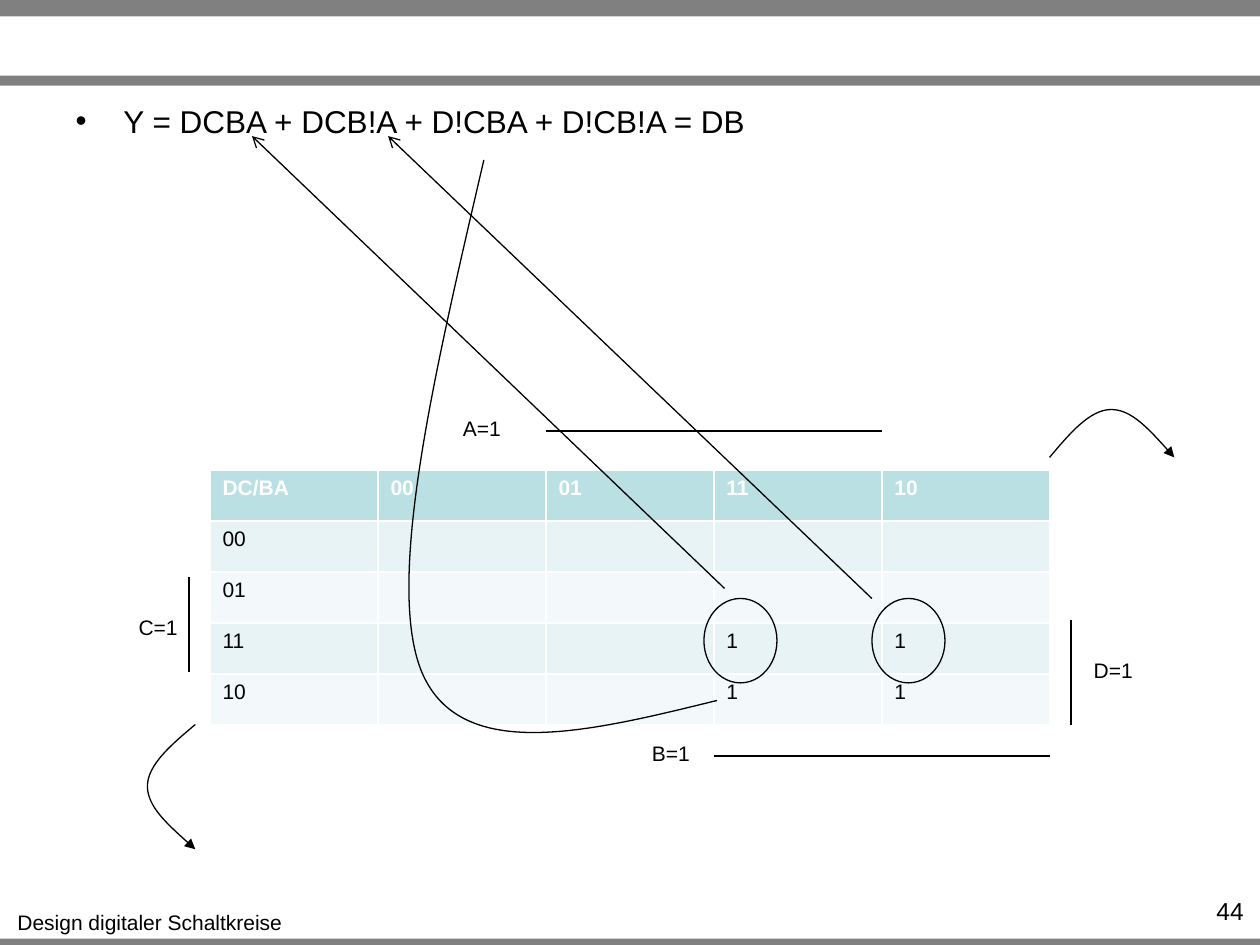
"""Build a Karnaugh map slide that simplifies Y to DB."""
from lxml import etree
from pptx import Presentation
from pptx import util as u
from pptx.dml.color import RGBColor
from pptx.enum import shapes, text
from pptx.oxml.ns import qn

BLACK = RGBColor(0, 0, 0)
WHITE = RGBColor(255, 255, 255)
GRAY = RGBColor(0x80, 0x80, 0x80)
HEADER = RGBColor(0xBB, 0xE0, 0xE3)
BANDS = RGBColor(0xF3, 0xF9, 0xFA), RGBColor(0xE7, 0xF3, 0xF4)
FONT = "Arial"

WIDTH, HEIGHT = 10, 7.5
EQUATION = "Y = DCBA + DCB!A + D!CBA + D!CB!A = DB"
BARS = [(7.45, 0.08), (0, 0.13), (0.6, 0.08)]
MAP = [
    ["DC/BA", "00", "01", "11", "10"],
    ["00", "", "", "", ""],
    ["01", "", "", "", ""],
    ["11", "", "", "1", "1"],
    ["10", "", "", "1", "1"],
]
MAP_LEFT, MAP_TOP = WIDTH / 6, 3.73
COLUMN, ROW = WIDTH * 2 / 15, 0.405
X = [MAP_LEFT + COLUMN * i for i in range(6)]
BOTTOM = MAP_TOP + ROW * 5

LABELS = [("A=1", 3.57, 3.25), ("B=1", 5.07, 5.83), ("C=1", 1, 4.83), ("D=1", 8.58, 5.17)]
RANGES = [
    (X[2], 3.42, X[4], 3.42),
    (X[3], 6, X[5], 6),
    (1.5, 4.58, 1.5, 5.33),
    (8.5, 4.92, 8.5, BOTTOM),
]
TERM_ARROWS = [(5.75, 4.67, 2, 1.08), (6.92, 4.75, 3.08, 1.08)]
CIRCLES = [X[3] - 0.08, X[4] - 0.08]
# Each curve: bounding box corners, start with cubic points, arrowhead
CURVES = [
    ((3.24, 1.27, 5.69, 5.81),
     [(5.69, 5.56), (4.67, 5.81), (3.66, 6.06), (3.35, 5.34),
      (3.05, 4.63), (3.45, 2.95), (3.84, 1.27)], None),
    ((8.33, 3.25, 9.32, 3.63),
     [(8.33, 3.63), (8.49, 3.44), (8.65, 3.25), (8.82, 3.25),
      (8.98, 3.25), (9.15, 3.44), (9.32, 3.63)], "triangle"),
    ((1.17, 5.75, 1.55, 6.74),
     [(1.55, 5.75), (1.36, 5.91), (1.17, 6.07), (1.17, 6.24),
      (1.17, 6.4), (1.36, 6.57), (1.55, 6.74)], "triangle"),
]


def inches(*values):
    return [u.Inches(value) for value in values]


def set_font(paragraph, size, color=BLACK, bold=False):
    font = paragraph.font
    font.name, font.size, font.bold = FONT, u.Pt(size), bold
    font.color.rgb = color


def set_line(shape, head=None):
    shape.line.color.rgb = BLACK
    shape.line.width = u.Pt(0.75)
    if head:
        line = shape.element.spPr.find(qn("a:ln"))
        etree.SubElement(line, qn("a:tailEnd"), type=head)


def add_text(slide, content, box, size, align, wrap=False):
    frame = slide.shapes.add_textbox(*inches(*box)).text_frame
    frame.word_wrap = wrap
    paragraph = frame.paragraphs[0]
    paragraph.text, paragraph.alignment = content, align
    set_font(paragraph, size)


def add_line(slide, ends, head=None):
    line = slide.shapes.add_connector(shapes.MSO_CONNECTOR.STRAIGHT, *inches(*ends))
    set_line(line, head)
    etree.SubElement(line.element.spPr, qn("a:effectLst"))


def add_curve(slide, box, points, head):
    left, top, right, bottom = inches(*box)
    builder = slide.shapes.build_freeform(left, top)
    builder.add_line_segments([(right, bottom)], close=False)
    curve = builder.convert_to_shape()
    outline = next(curve.element.iter(qn("a:path")))
    for child in list(outline):
        outline.remove(child)
    steps = [("a:moveTo", points[:1])]
    steps += [("a:cubicBezTo", points[i:i + 3]) for i in range(1, len(points), 3)]
    for tag, step in steps:
        segment = etree.SubElement(outline, qn(tag))
        for x, y in step:
            etree.SubElement(segment, qn("a:pt"), x=str(u.Inches(x) - left),
                             y=str(u.Inches(y) - top))
    curve.shadow.inherit = False
    curve.fill.background()
    set_line(curve, head)


def add_equation(slide):
    slide.shapes.title.element.getparent().remove(slide.shapes.title.element)
    body = slide.placeholders[1]
    body.left, body.top, body.width, body.height = inches(0.5, 0.76, 9, 1.99)
    body.text_frame.auto_size = text.MSO_AUTO_SIZE.NONE
    paragraph = body.text_frame.paragraphs[0]
    paragraph.text = EQUATION
    paragraph.space_before = u.Pt(0)
    properties = paragraph._p.get_or_add_pPr()
    properties.set("marL", str(u.Inches(0.38)))
    properties.set("indent", str(u.Inches(-0.38)))
    etree.SubElement(properties, qn("a:buChar"), char="•")
    set_font(paragraph, 18)


def add_map(slide):
    box = inches(MAP_LEFT, MAP_TOP, COLUMN * 5, ROW * 5)
    table = slide.shapes.add_table(len(MAP), len(MAP[0]), *box).table
    for r, values in enumerate(MAP):
        for c, value in enumerate(values):
            cell = table.cell(r, c)
            cell.text = value
            cell.fill.solid()
            cell.fill.fore_color.rgb = BANDS[r % 2] if r else HEADER
            set_font(cell.text_frame.paragraphs[0], 12, BLACK if r else WHITE, r == 0)


def main():
    presentation = Presentation()
    presentation.slide_width, presentation.slide_height = inches(WIDTH, HEIGHT)
    slide = presentation.slides.add_slide(presentation.slide_layouts[1])
    for top, height in BARS:
        bar = slide.shapes.add_shape(shapes.MSO_SHAPE.RECTANGLE, *inches(0, top, WIDTH, height))
        bar.shadow.inherit = False
        bar.fill.solid()
        bar.fill.fore_color.rgb = GRAY
        bar.line.fill.background()
    center, right = text.PP_ALIGN.CENTER, text.PP_ALIGN.RIGHT
    add_text(slide, "Design digitaler Schaltkreise", (0.03, 7.17, 2.32, 0.3), 12, center)
    add_text(slide, "44", (9.1, 7.06, 0.87, 0.24), 14, right, True)
    add_equation(slide)
    add_map(slide)
    for label, left, top in LABELS:
        add_text(slide, label, (left, top, 0.51, 0.3), 12, center)
    for ends in RANGES:
        add_line(slide, ends)
    for left in CIRCLES:
        circle = slide.shapes.add_shape(shapes.MSO_SHAPE.OVAL, *inches(left, 4.75, 0.58, 0.67))
        circle.shadow.inherit = False
        circle.fill.background()
        set_line(circle)
    for ends in TERM_ARROWS:
        add_line(slide, ends, "arrow")
    for box, points, head in CURVES:
        add_curve(slide, box, points, head)
    presentation.save("out.pptx")


if __name__ == "__main__":
    main()
